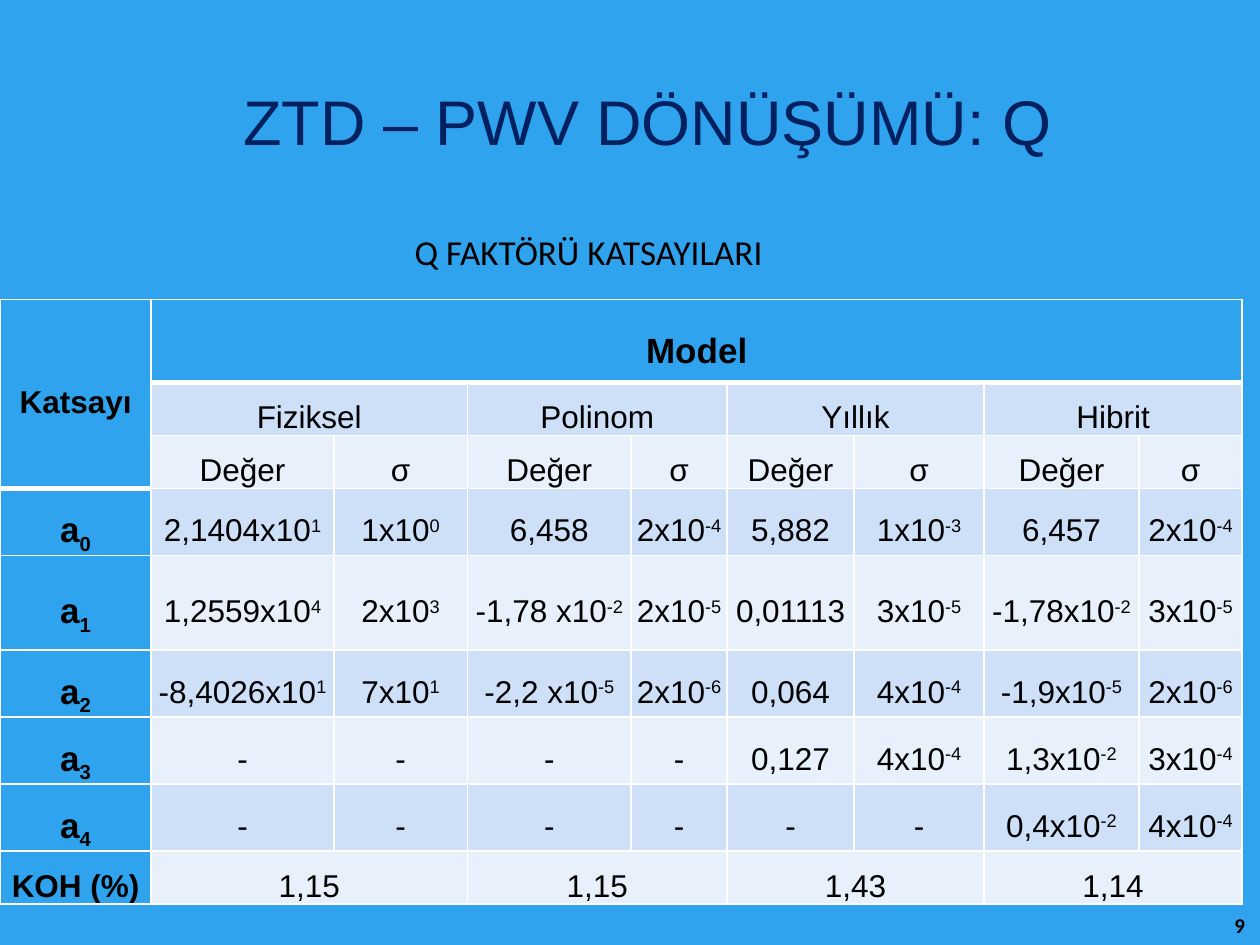
from lxml.etree import SubElement
from pptx import Presentation
from pptx.dml.color import RGBColor
from pptx.enum.text import MSO_ANCHOR, PP_ALIGN
from pptx.oxml.ns import qn
from pptx.util import Inches, Pt

COLORS = {"sky": "2FA3EE", "navy": "002060", "ink": "000000",
          "line": "FFFFFF", "band": "CDE0F8", "pale": "E8F0FC"}
WIDTH, HEIGHT = Inches(10), Inches(7.5)

COLUMN_SHARES = [0.12, 0.145, 0.106, 0.13, 0.076, 0.101, 0.103, 0.123, 0.082]
ROW_SHARES = [0.088, 0.048, 0.048, 0.051, 0.1, 0.051, 0.051, 0.051, 0.051]
MODELS = ["Fiziksel", "Polinom", "Yıllık", "Hibrit"]
KOH = ["1,15", "1,15", "1,43", "1,14"]
COEFFICIENTS = [
    ["a_0", "2,1404x10^1", "1x10^0", "6,458", "2x10^-4", "5,882", "1x10^-3", "6,457", "2x10^-4"],
    ["a_1", "1,2559x10^4", "2x10^3", "-1,78 x10^-2", "2x10^-5", "0,01113", "3x10^-5",
     "-1,78x10^-2", "3x10^-5"],
    ["a_2", "-8,4026x10^1", "7x10^1", "-2,2 x10^-5", "2x10^-6", "0,064", "4x10^-4",
     "-1,9x10^-5", "2x10^-6"],
    ["a_3", "-", "-", "-", "-", "0,127", "4x10^-4", "1,3x10^-2", "3x10^-4"],
    ["a_4", "-", "-", "-", "-", "-", "-", "0,4x10^-2", "4x10^-4"],
]


def to_lengths(box):
    """Turn shares of the slide into left, top, width and height."""
    return [round(share * side) for share, side in zip(box, (WIDTH, HEIGHT) * 2)]


def place(part, box):
    """Move a part to its box."""
    for name, length in zip(("left", "top", "width", "height"), to_lengths(box)):
        setattr(part, name, length)


def paint(fill, color):
    """Fill with one named colour."""
    fill.solid()
    fill.fore_color.rgb = RGBColor.from_string(COLORS[color])


def write(paragraph, text, color="ink", align=PP_ALIGN.CENTER, spacing=1.0, **font):
    """Write text, raising what follows ^ and lowering what follows _."""
    paragraph.alignment = align
    paragraph.line_spacing = spacing
    paragraph.space_before = Pt(0)
    mark = next((sign for sign in "^_" if sign in text), None)
    shift = {"^": "30000", "_": "-25000"}.get(mark)
    for order, piece in enumerate(text.split(mark) if mark else [text]):
        run = paragraph.add_run()
        run.text = piece
        for name, value in font.items():
            setattr(run.font, name, value)
        run.font.color.rgb = RGBColor.from_string(COLORS[color])
        if order:
            run._r.get_or_add_rPr().set("baseline", shift)


def add_heading(title, box):
    """Place and write the title."""
    place(title, box)
    title.text_frame.vertical_anchor = MSO_ANCHOR.MIDDLE
    write(title.text_frame.paragraphs[0], "ZTD – PWV DÖNÜŞÜMÜ: Q", "navy",
          spacing=0.9, name="Arial", size=Pt(36))


def add_caption(body, box):
    """Place and write the table caption without a bullet."""
    place(body, box)
    caption = body.text_frame.paragraphs[0]
    properties = caption._p.get_or_add_pPr()
    for name in ("marL", "indent"):
        properties.set(name, "0")
    SubElement(properties, qn("a:buNone"))
    write(caption, "Q FAKTÖRÜ KATSAYILARI", align=PP_ALIGN.LEFT, spacing=1.1,
          name="Calibri", size=Pt(20))


def rule_cell(cell, weights):
    """Draw the four borders of a cell."""
    properties = cell._tc.get_or_add_tcPr()
    for side, weight in zip("LRTB", weights):
        border = SubElement(properties, qn(f"a:ln{side}"), w=str(Pt(weight)))
        solid = SubElement(border, qn("a:solidFill"))
        SubElement(solid, qn("a:srgbClr"), val=COLORS["line"])


def style_cell(cell, row, column):
    """Set the borders, fill and insets of a cell from its position."""
    above = 3 if (row == 1 and column) or (row == 3 and not column) else 1
    below = 3 if (row == 0 and column) or (row < 3 and not column) else 1
    rule_cell(cell, (1, 1, above, below))
    paint(cell.fill, "sky" if row == 0 or column == 0 else "band" if row % 2 else "pale")
    layout = {"margin_left": Inches(0.04), "margin_right": Inches(0.04), "margin_top": 0,
              "margin_bottom": 0, "vertical_anchor": MSO_ANCHOR.MIDDLE}
    for name, value in layout.items():
        setattr(cell, name, value)


def spread(label, values):
    """Give each model's value the first of its two columns."""
    return [label] + [text for value in values for text in (value, "")]


def add_coefficients(slide, box):
    """Build the table of Q factor coefficients."""
    rows = [["Katsayı", "Model"] + [""] * 7, spread("", MODELS),
            [""] + ["Değer", "σ"] * 4, *COEFFICIENTS, spread("KOH (%)", KOH)]
    table = slide.shapes.add_table(len(rows), len(rows[0]), *to_lengths(box)).table
    for column, share in zip(table.columns, COLUMN_SHARES):
        column.width = round(share * WIDTH)
    for row, share in zip(table.rows, ROW_SHARES):
        row.height = round(share * HEIGHT)
    for r, texts in enumerate(rows):
        for c, text in enumerate(texts):
            cell = table.cell(r, c)
            style_cell(cell, r, c)
            if text:
                large = text == "Model" or "_" in text
                write(cell.text_frame.paragraphs[0], text, spacing=1.5, name="Arial",
                      size=Pt(20 if large else 18), bold=r == 0 or c == 0)
    table.cell(0, 0).merge(table.cell(2, 0))
    table.cell(0, 1).merge(table.cell(0, 8))
    for r in (1, len(rows) - 1):
        for c in range(1, 9, 2):
            table.cell(r, c).merge(table.cell(r, c + 1))


def add_page_number(slide, box):
    """Write the page number in the corner."""
    frame = slide.shapes.add_textbox(*to_lengths(box)).text_frame
    frame.word_wrap = True
    frame.vertical_anchor = MSO_ANCHOR.MIDDLE
    write(frame.paragraphs[0], "9", align=PP_ALIGN.RIGHT, name="Calibri",
          size=Pt(12), bold=True)


def main():
    """Build and save the slide."""
    deck = Presentation()
    deck.slide_width, deck.slide_height = WIDTH, HEIGHT
    slide = deck.slides.add_slide(deck.slide_layouts[1])
    paint(slide.background.fill, "sky")
    add_heading(slide.shapes.title, (0.083, 0.06, 0.862, 0.145))
    add_caption(slide.placeholders[1], (0.319, 0.233, 0.339, 0.065))
    add_coefficients(slide, (0, 0.317, sum(COLUMN_SHARES), sum(ROW_SHARES)))
    add_page_number(slide, (0.935, 0.953, 0.063, 0.053))
    deck.save("out.pptx")


if __name__ == "__main__":
    main()
